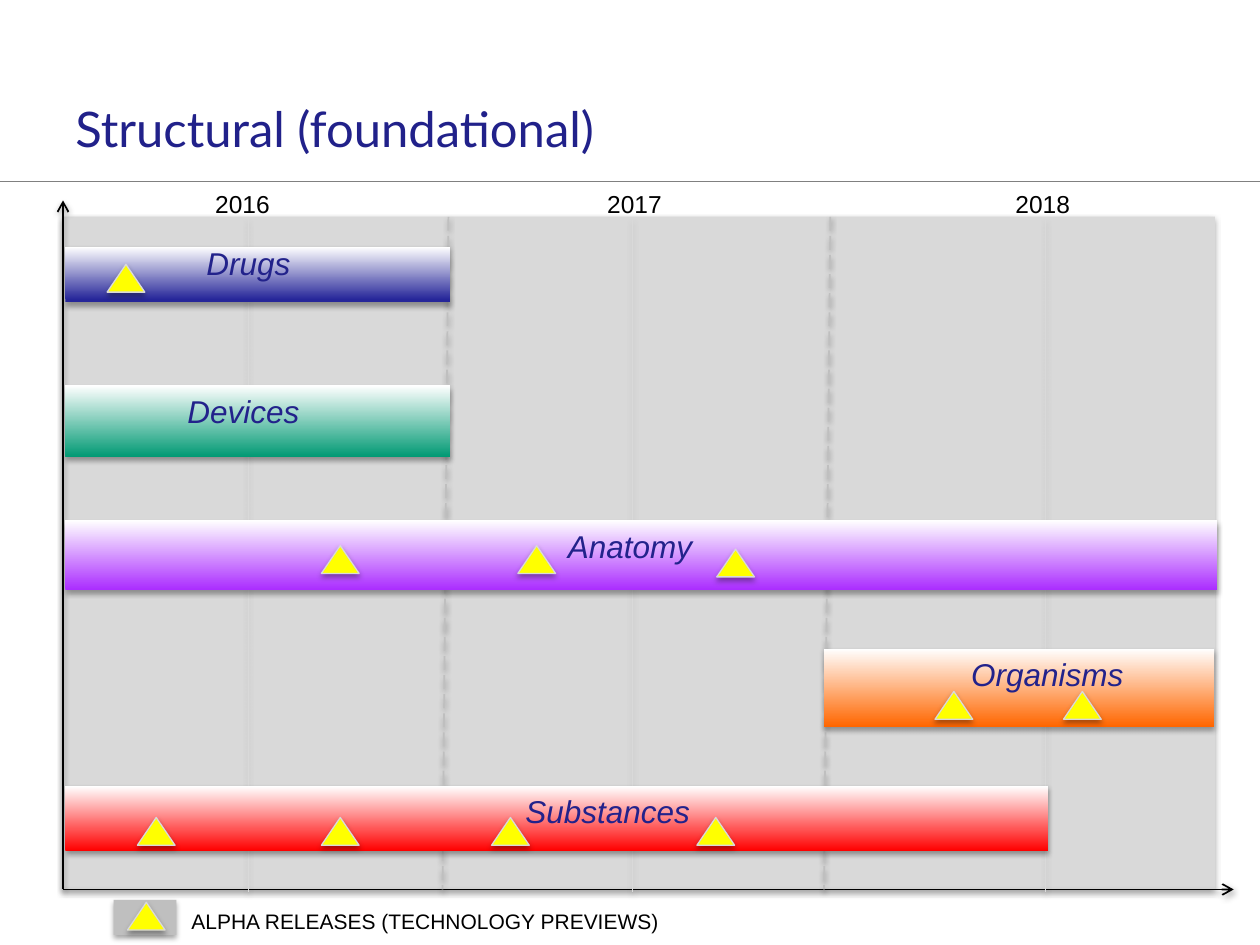
import pptx
import pptx.dml.color
import pptx.enum.dml
import pptx.enum.shapes
import pptx.enum.text
import pptx.oxml.ns
import pptx.util
from lxml import etree

Cm, Pt = pptx.util.Cm, pptx.util.Pt
RGBColor = pptx.dml.color.RGBColor
MSO_SHAPE = pptx.enum.shapes.MSO_SHAPE
DASH = pptx.enum.dml.MSO_LINE
qn = pptx.oxml.ns.qn

TITLE_BLUE = RGBColor(0x21, 0x21, 0x8A)
LABEL_BLUE = RGBColor(0x22, 0x22, 0x8B)
BLACK = RGBColor(0, 0, 0)
WHITE = RGBColor(0xFF, 0xFF, 0xFF)
YELLOW = RGBColor(0xFF, 0xFF, 0)
LIGHT_GREY = RGBColor(0xD9, 0xD9, 0xD9)
MID_GREY = RGBColor(0xBF, 0xBF, 0xBF)
RULE_GREY = RGBColor(0x80, 0x80, 0x80)
BLUE = RGBColor(0x26, 0x26, 0x99)
GREEN = RGBColor(0, 0x99, 0x73)
PURPLE = RGBColor(0xAB, 0x2E, 0xFF)
ORANGE = RGBColor(0xFF, 0x66, 0)
RED = RGBColor(0xFF, 0, 0)

# Content; all lengths in centimetres
TITLE = "Structural (foundational)"
LEGEND = "ALPHA RELEASES (TECHNOLOGY PREVIEWS)"
PLOT = (1.27, 4.37, 23.22, 13.56)
YEARS = [("2016", 4.09), ("2017", 11.99), ("2018", 20.22)]
YEAR_ENDS = [(9.04, 8.92), (16.74, 16.61)]
MID_YEARS = [5.0, 12.75, 21.08]
TRIANGLE = (0.76, 0.56)
# name, bar box, colour, first stop, label box, release corners
TRACKS = [
    ("Devices", (1.32, 7.77, 7.75, 1.45), GREEN, 0, (3.53, 7.77, 2.95, 0.91), []),
    ("Drugs", (1.32, 4.98, 7.75, 1.12), BLUE, 0.05, (3.91, 4.8, 2.36, 0.84),
     [(2.16, 5.33)]),
    ("Organisms", (16.61, 13.08, 7.87, 1.57), ORANGE, 0, (19.33, 13.08, 3.76, 0.97),
     [(18.85, 13.94), (21.44, 13.94)]),
    ("Substances", (1.32, 15.85, 19.81, 1.3), RED, 0, (10.34, 15.85, 4.01, 0.81),
     [(2.77, 16.48), (6.48, 16.48), (9.91, 16.48), (14.05, 16.48)]),
    ("Anatomy", (1.32, 10.49, 23.22, 1.4), PURPLE, 0, (11.2, 10.49, 3.2, 0.89),
     [(6.48, 11.0), (10.44, 11.0), (14.45, 11.07)]),
]

presentation = pptx.Presentation()
presentation.slide_width, presentation.slide_height = Cm(25.4), Cm(19.05)
slide = presentation.slides.add_slide(presentation.slide_layouts[5])


def cast_shadow(shape, distance, opacity):
    properties = shape._element.spPr
    effects = properties.find(qn("a:effectLst"))
    if effects is None:
        effects = etree.SubElement(properties, qn("a:effectLst"))
    shadow = etree.SubElement(effects, qn("a:outerShdw"), blurRad=str(Pt(3.1)),
                              dist=str(Pt(distance)), dir="5400000", rotWithShape="0")
    colour = etree.SubElement(shadow, qn("a:srgbClr"), val="000000")
    etree.SubElement(colour, qn("a:alpha"), val=str(opacity * 1000))


def add_block(kind, box, colour, first_stop=None, outline=None):
    shape = slide.shapes.add_shape(kind, *map(Cm, box))
    shape.shadow.inherit = False
    if first_stop is None:
        shape.fill.solid()
        shape.fill.fore_color.rgb = colour
    else:
        shape.fill.gradient()
        shape.fill.gradient_angle = 90
        bottom, top = shape.fill.gradient_stops
        bottom.color.rgb, bottom.position = colour, first_stop
        top.color.rgb, top.position = WHITE, 1
    if outline is None:
        shape.line.fill.background()
    else:
        shape.line.color.rgb = outline
        shape.line.width = Pt(0.75)
    cast_shadow(shape, 1.8, 35)


def add_release(corner):
    add_block(MSO_SHAPE.ISOSCELES_TRIANGLE, corner + TRIANGLE, YELLOW, outline=LIGHT_GREY)


def add_line(start, end, colour, width, dash=None, arrow=False, shadow=True):
    line = slide.shapes.add_connector(pptx.enum.shapes.MSO_CONNECTOR.STRAIGHT,
                                      *map(Cm, start + end))
    line.line.color.rgb = colour
    line.line.width = Pt(width)
    if dash is not None:
        line.line.dash_style = dash
    if arrow:
        etree.SubElement(line.line._get_or_add_ln(), qn("a:tailEnd"), type="arrow")
    if shadow:
        cast_shadow(line, 1.6, 38)
    else:
        etree.SubElement(line._element.spPr, qn("a:effectLst"))


def format_text(frame, text, size, colour, font="Arial", italic=False):
    frame.text = text
    run_font = frame.paragraphs[0].runs[0].font
    run_font.name, run_font.size, run_font.italic = font, Pt(size), italic
    run_font.color.rgb = colour


def add_label(box, text, size, colour, italic=False):
    frame = slide.shapes.add_textbox(*map(Cm, box)).text_frame
    frame.word_wrap = False
    format_text(frame, text, size, colour, italic=italic)


# Title and rule
add_line((0, 3.66), (25.4, 3.66), RULE_GREY, 0.75, shadow=False)
title = slide.shapes.title
title.left, title.top, title.width, title.height = map(Cm, (1.27, 1.78, 18.36, 1.6))
frame = title.text_frame
frame.margin_left = frame.margin_right = frame.margin_top = frame.margin_bottom = Cm(0.25)
frame.vertical_anchor = pptx.enum.text.MSO_ANCHOR.MIDDLE
format_text(frame, TITLE, 28, TITLE_BLUE, "Lato")
frame.paragraphs[0].alignment = pptx.enum.text.PP_ALIGN.LEFT

# Plot area, axes and years
left, top, width, height = PLOT
bottom_edge = top + height
add_block(MSO_SHAPE.RECTANGLE, PLOT, LIGHT_GREY)
for tip in [(left, 4.04), (24.87, bottom_edge)]:
    add_line((left, bottom_edge), tip, BLACK, 1, arrow=True)
for upper, lower in YEAR_ENDS:
    add_line((upper, top), (lower, bottom_edge), MID_GREY, 1, DASH.LONG_DASH)
for year, x in YEARS:
    add_label((x, 3.68, 1.63, 0.86), year, 14, BLACK)
for x in MID_YEARS:
    add_line((x, bottom_edge + 0.05), (x, top + 0.05), LIGHT_GREY, 0.25, DASH.ROUND_DOT)

# Tracks with their releases
for name, bar, colour, first_stop, label, releases in TRACKS:
    add_block(MSO_SHAPE.RECTANGLE, bar, colour, first_stop)
    add_label(label, name, 18, LABEL_BLUE, italic=True)
    for corner in releases:
        add_release(corner)

# Legend
add_block(MSO_SHAPE.RECTANGLE, (2.29, 18.14, 1.27, 0.71), MID_GREY)
add_release((2.57, 18.19))
add_label((3.61, 18.19, 10.06, 0.76), LEGEND, 12, BLACK)

presentation.save("out.pptx")
